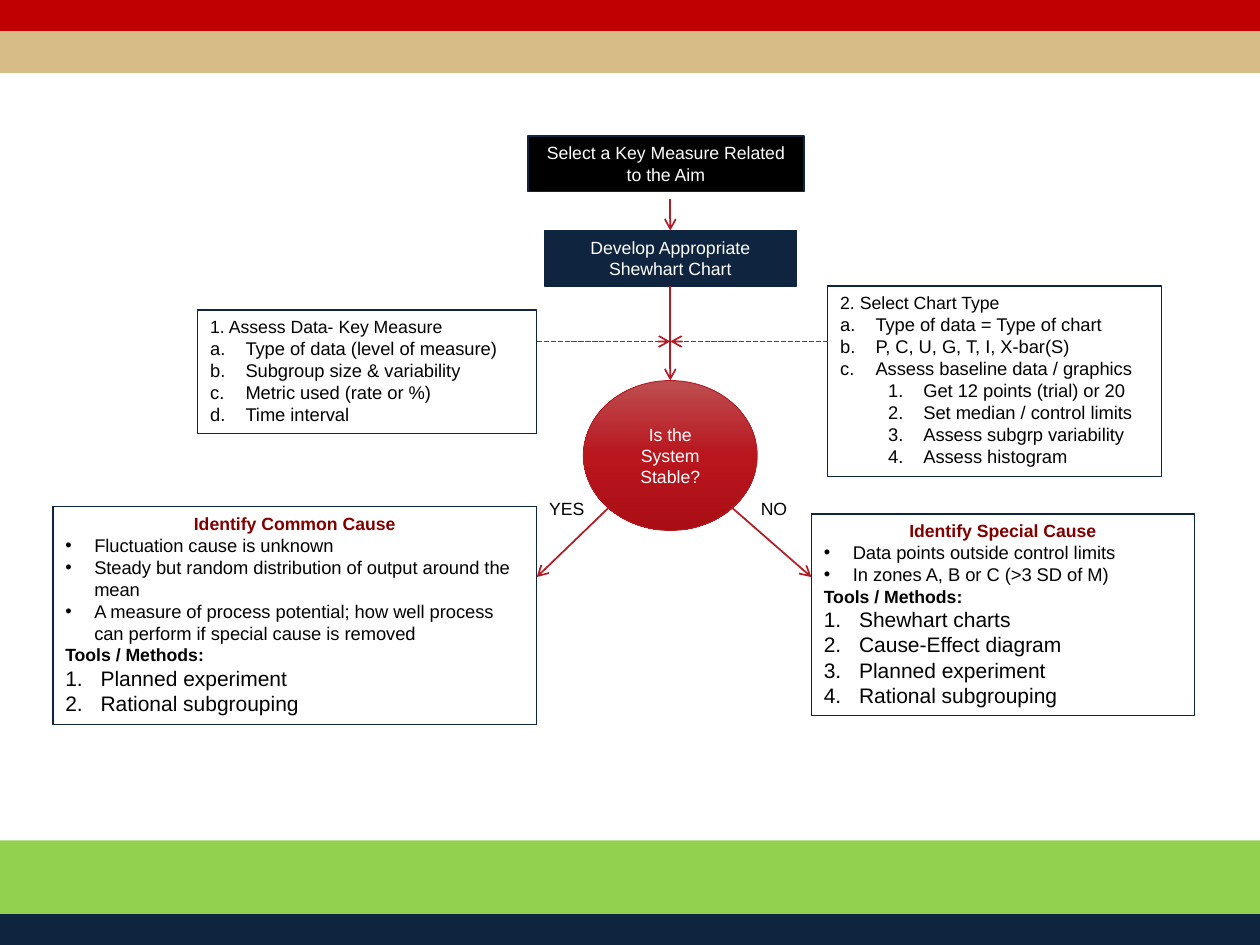
from copy import deepcopy

from lxml.etree import SubElement
from pptx import Presentation
from pptx.dml.color import RGBColor
from pptx.enum.dml import MSO_LINE
from pptx.enum.shapes import MSO_CONNECTOR, MSO_SHAPE
from pptx.enum.text import MSO_ANCHOR, MSO_AUTO_SIZE, PP_ALIGN
from pptx.oxml.ns import qn
from pptx.util import Inches, Pt

NAVY, RED, BLACK, WHITE = "0F243E", "B21D25", "000000", "FFFFFF"

# Paragraph styles: font values, alignment, indent, level, bullet
STYLES = {
    "plain": dict(size=10.1),
    "mid": dict(size=10.1, color=WHITE, align=PP_ALIGN.CENTER),
    "head": dict(size=10.1, color="800000", bold=True, align=PP_ALIGN.CENTER),
    "bold": dict(size=10.1, bold=True),
    "dot": dict(indent=0.23, bullet="•"),
    "abc": dict(indent=0.28, bullet="alphaLcPeriod"),
    "sub": dict(indent=0.28, left=0.66, level=1, bullet="arabicPeriod"),
    "num": dict(size=12, indent=0.28, bullet="arabicPeriod"),
}

BANDS = [
    (7.25, 0.25, NAVY),
    (6.67, 0.58, "92D050"),
    (0, 0.25, "C00000"),
    (0.25, 0.33, "D7BC87"),
]

CHART = [
    ("plain", "2. Select Chart Type"),
    ("abc", "Type of data = Type of chart"),
    ("abc", "P, C, U, G, T, I, X-bar(S)"),
    ("abc", "Assess baseline data / graphics"),
    ("sub", "Get 12 points (trial) or 20"),
    ("sub", "Set median / control limits"),
    ("sub", "Assess subgrp variability"),
    ("sub", "Assess histogram"),
]
DATA = [
    ("plain", "1. Assess Data- Key Measure"),
    ("abc", "Type of data (level of measure)"),
    ("abc", "Subgroup size & variability"),
    ("abc", "Metric used (rate or %)"),
    ("abc", "Time interval"),
]
COMMON = [
    ("head", "Identify Common Cause"),
    ("dot", "Fluctuation cause is unknown"),
    ("dot", "Steady but random distribution of output around the mean"),
    ("dot", "A measure of process potential; how well process can perform "
            "if special cause is removed"),
    ("bold", "Tools / Methods:"),
    ("num", "Planned experiment"),
    ("num", "Rational subgrouping"),
]
SPECIAL = [
    ("head", "Identify Special Cause"),
    ("dot", "Data points outside control limits"),
    ("dot", "In zones A, B or C (>3 SD of M)"),
    ("bold", "Tools / Methods:"),
    ("num", "Shewhart charts"),
    ("num", "Cause-Effect diagram"),
    ("num", "Planned experiment"),
    ("num", "Rational subgrouping"),
]


def paint(form, color):
    """Set a solid colour on a fill."""
    form.solid()
    form.fore_color.rgb = RGBColor.from_string(color)


def add_mark(para, style):
    """Add a bullet or automatic number with a hanging indent."""
    props = para._p.get_or_add_pPr()
    hang, mark = style["indent"], style["bullet"]
    props.set("marL", str(Inches(style.get("left", hang))))
    props.set("indent", str(-Inches(hang)))
    SubElement(props, qn("a:buFont"), typeface="Arial")
    if mark == "•":
        SubElement(props, qn("a:buChar"), char=mark)
    else:
        SubElement(props, qn("a:buAutoNum"), type=mark)


def write(frame, lines):
    """Fill a text frame with (style, text) lines."""
    for i, (name, text) in enumerate(lines):
        style = STYLES[name]
        para = frame.paragraphs[0] if i == 0 else frame.add_paragraph()
        para.alignment = style.get("align", PP_ALIGN.LEFT)
        para.level = style.get("level", 0)
        if "bullet" in style:
            add_mark(para, style)
        run = para.add_run()
        run.text = text
        font = dict(name="Arial", size=Pt(style.get("size", 10.5)),
                    bold=style.get("bold", False))
        for key, value in font.items():
            setattr(run.font, key, value)
        paint(run.font.fill, style.get("color", BLACK))


def add_form(slide, kind, place, fill=None, line=None, width=0.75):
    shape = slide.shapes.add_shape(kind, *map(Inches, place))
    shape.shadow.inherit = False
    if fill:
        paint(shape.fill, fill)
    else:
        shape.fill.background()
    if line:
        paint(shape.line.fill, line)
        shape.line.width = Pt(width)
    else:
        shape.line.fill.background()
    return shape


def add_box(slide, place, lines, fill=None):
    """Add an outlined box that grows with its text."""
    box = add_form(slide, MSO_SHAPE.RECTANGLE, place, fill, NAVY)
    frame = box.text_frame
    frame.word_wrap = True
    frame.vertical_anchor = MSO_ANCHOR.TOP
    frame.auto_size = MSO_AUTO_SIZE.SHAPE_TO_FIT_TEXT
    write(frame, lines)
    return box


def add_label(slide, place, text):
    frame = slide.shapes.add_textbox(*map(Inches, place)).text_frame
    frame.word_wrap = True
    frame.auto_size = MSO_AUTO_SIZE.SHAPE_TO_FIT_TEXT
    write(frame, [("plain", text)])


def add_test(slide, place, text):
    """Add the decision circle with its three-stop gradient."""
    oval = add_form(slide, MSO_SHAPE.OVAL, place, RED, RED, 0.5)
    oval.fill.gradient()
    oval.fill.gradient_angle = 270
    stops = oval._element.spPr.find(".//" + qn("a:gsLst"))
    stops.insert(1, deepcopy(stops[0]))
    shades = [(0, "BD4E50"), (0.5, "B9161E"), (1, "AB0D15")]
    for stop, (spot, color) in zip(oval.fill.gradient_stops, shades):
        stop.position = spot
        stop.color.rgb = RGBColor.from_string(color)
    oval.text_frame.word_wrap = True
    oval.text_frame.vertical_anchor = MSO_ANCHOR.MIDDLE
    write(oval.text_frame, [("mid", text)])
    return oval


def add_arrow(slide, start, end, dash=False):
    arrow = slide.shapes.add_connector(
        MSO_CONNECTOR.STRAIGHT, *map(Inches, start + end))
    paint(arrow.line.fill, RED)
    arrow.line.width = Pt(1)
    if dash:
        arrow.line.dash_style = MSO_LINE.SQUARE_DOT
    line = arrow._element.spPr.find(qn("a:ln"))
    SubElement(line, qn("a:tailEnd"), type="arrow")
    SubElement(arrow._element.spPr, qn("a:effectLst"))
    return arrow


def main():
    deck = Presentation()
    deck.slide_width, deck.slide_height = Inches(10), Inches(7.5)
    slide = deck.slides.add_slide(deck.slide_layouts[6])

    # Bands at top and bottom
    for top, high, color in BANDS:
        add_form(slide, MSO_SHAPE.RECTANGLE, (0, top, 10, high), color)

    # Flow steps
    add_label(slide, (4.26, 3.9, 0.56, 0.27), "YES")
    add_label(slide, (5.94, 3.9, 0.44, 0.27), "NO")
    add_box(slide, (4.19, 1.08, 2.19, 0.44),
            [("mid", "Select a Key Measure Related to the Aim")], BLACK)
    build = add_box(slide, (4.32, 1.83, 2, 0.44),
                    [("mid", "Develop Appropriate Shewhart Chart")], NAVY)
    add_box(slide, (6.57, 2.27, 2.65, 1.51), CHART)
    add_box(slide, (1.57, 2.46, 2.69, 0.98), DATA)
    add_box(slide, (0.42, 4.02, 3.84, 1.73), COMMON)
    test = add_test(slide, (4.63, 3.02, 1.38, 1.19), "Is the System Stable?")
    add_box(slide, (6.44, 4.08, 3.04, 1.6), SPECIAL)

    # Arrows down the middle
    mid = 5.32
    stem = add_arrow(slide, (mid, 2.27), (mid, 3.02))
    stem.begin_connect(build, 2)
    stem.end_connect(test, 0)
    add_arrow(slide, (mid, 1.58), (mid, 1.83)).end_connect(build, 0)

    # Branches and side inputs
    add_arrow(slide, (5.81, 4.03), (6.44, 4.58))
    add_arrow(slide, (4.83, 4.03), (4.26, 4.58))
    for side in (4.26, 6.57):
        add_arrow(slide, (side, 2.71), (mid, 2.71), dash=True)

    deck.save("out.pptx")


if __name__ == "__main__":
    main()
